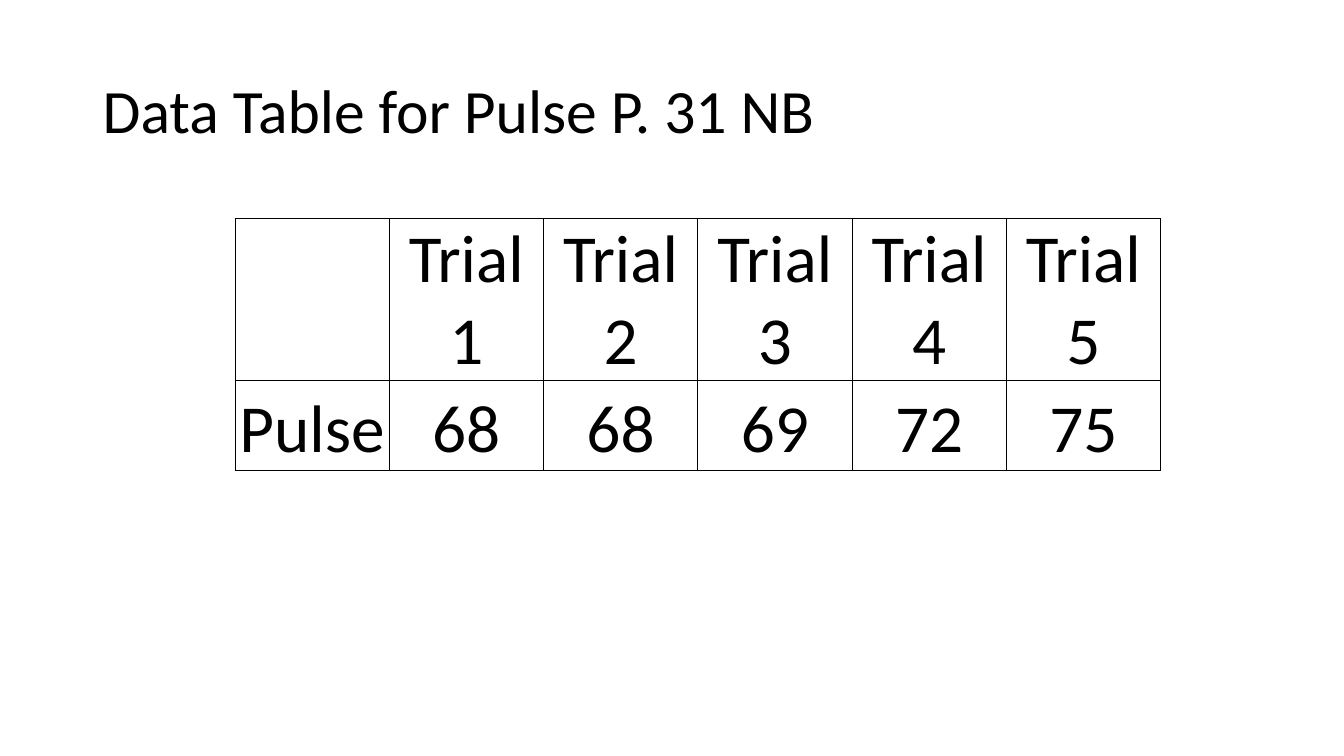
import pptx
import pptx.util
import pptx.dml.color
import pptx.enum.text
import pptx.oxml
import pptx.oxml.ns
from pptx.util import Inches

TITLE = "Data Table for Pulse P. 31 NB"
PULSE_ROWS = [
    ["", "Trial 1", "Trial 2", "Trial 3", "Trial 4", "Trial 5"],
    ["Pulse", "68", "68", "69", "72", "75"],
]
COLORS = {"ink": "000000"}
FONT = "Calibri"
TITLE_BOX = (0.92, 0.4, 11.5, 1.45)
TABLE_LEFT, TABLE_TOP = 2.33, 2.17
COLUMN_WIDTH = 1.53
ROW_HEIGHTS = [1.6, 0.9]
BORDER_PT = 0.5


def style_text(paragraph, size):
    for run in paragraph.runs:
        run.font.name = FONT
        run.font.size = pptx.util.Pt(size)
        run.font.color.rgb = pptx.dml.color.RGBColor.from_string(COLORS["ink"])


def add_borders(cell):
    properties = cell._tc.get_or_add_tcPr()
    for position, side in enumerate(("lnL", "lnR", "lnT", "lnB")):
        border = pptx.oxml.parse_xml(
            f'<a:{side} {pptx.oxml.ns.nsdecls("a")} w="{pptx.util.Pt(BORDER_PT)}">'
            f'<a:solidFill><a:srgbClr val="{COLORS["ink"]}"/></a:solidFill></a:{side}>'
        )
        properties.insert(position, border)


def add_title(slide):
    frame = slide.shapes.add_textbox(*map(Inches, TITLE_BOX)).text_frame
    frame.word_wrap = True
    frame.vertical_anchor = pptx.enum.text.MSO_ANCHOR.MIDDLE
    frame.text = TITLE
    frame.paragraphs[0].line_spacing = 0.9
    style_text(frame.paragraphs[0], 44)


def add_pulse_table(slide):
    column_count = len(PULSE_ROWS[0])
    table = slide.shapes.add_table(
        len(PULSE_ROWS), column_count, Inches(TABLE_LEFT), Inches(TABLE_TOP),
        Inches(COLUMN_WIDTH * column_count), Inches(sum(ROW_HEIGHTS)),
    ).table
    table.first_row = False
    table.horz_banding = False
    for column in table.columns:
        column.width = Inches(COLUMN_WIDTH)
    for row, height, values in zip(table.rows, ROW_HEIGHTS, PULSE_ROWS):
        row.height = Inches(height)
        for cell, value in zip(row.cells, values):
            cell.margin_left = cell.margin_right = 0
            cell.margin_top = cell.margin_bottom = 0
            cell.vertical_anchor = pptx.enum.text.MSO_ANCHOR.BOTTOM
            cell.fill.background()
            add_borders(cell)
            cell.text_frame.text = value
            paragraph = cell.text_frame.paragraphs[0]
            paragraph.alignment = pptx.enum.text.PP_ALIGN.CENTER
            style_text(paragraph, 48)


def main():
    """Build the pulse data table slide."""
    presentation = pptx.Presentation()
    presentation.slide_width = Inches(13.33)
    presentation.slide_height = Inches(7.5)
    slide = presentation.slides.add_slide(presentation.slide_layouts[6])
    add_title(slide)
    add_pulse_table(slide)
    presentation.save("out.pptx")


if __name__ == "__main__":
    main()
